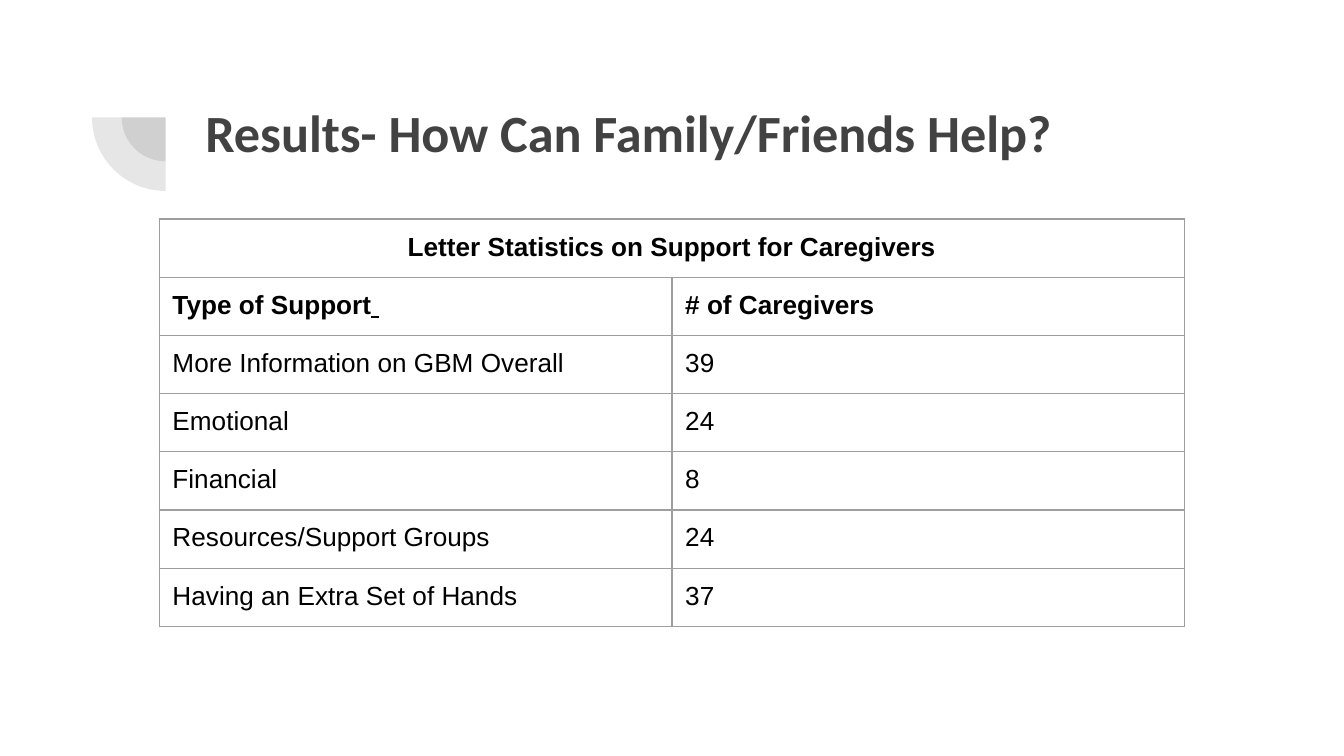
from dataclasses import dataclass

from lxml.etree import SubElement
from pptx import Presentation
from pptx.dml.color import RGBColor
from pptx.enum.shapes import MSO_SHAPE
from pptx.enum.text import MSO_ANCHOR, MSO_AUTO_SIZE, PP_ALIGN
from pptx.oxml.ns import qn
from pptx.util import Cm, Pt

TITLE = "Results- How Can Family/Friends Help?"
TABLE_HEADING = "Letter Statistics on Support for Caregivers"
COLUMN_HEADINGS = ("Type of Support", "# of Caregivers")
SUPPORT_COUNTS = [
    ("More Information on GBM Overall", 39),
    ("Emotional", 24),
    ("Financial", 8),
    ("Resources/Support Groups", 24),
    ("Having an Extra Set of Hands", 37),
]


@dataclass(frozen=True)
class Theme:
    title_font: str = "Calibri"
    table_font: str = "Arial"
    title_size: int = 28
    table_size: int = 14
    dark: str = "424242"
    text: str = "000000"
    border: str = "9E9E9E"
    border_width: float = 0.75
    ornament_opacity: int = 13


THEME = Theme()
INSET = Cm(0.25)
ROW_HEIGHT = Cm(1.1)
COLUMN_WIDTH = Cm(9.69)
ORNAMENT_CENTER = (Cm(3.13), Cm(2.22))
ORNAMENT_RADII = (Cm(0.83), Cm(1.39))


def format_run(run, font_name, size, color, bold):
    font = run.font
    font.name, font.size, font.bold = font_name, Pt(size), bold
    font.color.rgb = RGBColor.from_string(color)


def add_quarter_disc(slide, radius):
    center_x, center_y = ORNAMENT_CENTER
    disc = slide.shapes.add_shape(
        MSO_SHAPE.PIE, center_x - radius, center_y - radius, 2 * radius, 2 * radius
    )
    # Angles in units of 100000/60000 degree: 90 to 180 degrees
    disc.adjustments[0], disc.adjustments[1] = 54, 108
    disc.shadow.inherit = False
    disc.line.fill.background()
    disc.fill.solid()
    disc.fill.fore_color.rgb = RGBColor.from_string(THEME.dark)
    color = disc.fill._xPr.find(f"{qn('a:solidFill')}/{qn('a:srgbClr')}")
    SubElement(color, qn("a:alpha"), val=str(THEME.ornament_opacity * 1000))


def add_title(slide):
    title = slide.shapes.title
    title.left, title.top, title.width, title.height = Cm(3.63), Cm(1.65), Cm(19.53), Cm(2.77)
    frame = title.text_frame
    frame.text = TITLE
    frame.word_wrap = True
    frame.auto_size = MSO_AUTO_SIZE.NONE
    frame.vertical_anchor = MSO_ANCHOR.TOP
    frame.margin_left = frame.margin_right = frame.margin_top = frame.margin_bottom = INSET
    paragraph = frame.paragraphs[0]
    paragraph.alignment = PP_ALIGN.LEFT
    format_run(paragraph.runs[0], THEME.title_font, THEME.title_size, THEME.dark, True)


def add_borders(cell):
    properties = cell._tc.get_or_add_tcPr()
    for side in ("lnL", "lnR", "lnT", "lnB"):
        line = SubElement(properties, qn(f"a:{side}"), w=str(Pt(THEME.border_width)))
        SubElement(SubElement(line, qn("a:solidFill")), qn("a:srgbClr"), val=THEME.border)


def add_support_table(slide):
    rows = [(TABLE_HEADING, ""), COLUMN_HEADINGS, *SUPPORT_COUNTS]
    table = slide.shapes.add_table(
        len(rows), 2, Cm(3.01), Cm(4.14), 2 * COLUMN_WIDTH, len(rows) * ROW_HEIGHT
    ).table
    table.first_row = table.horz_banding = False
    for row_index, values in enumerate(rows):
        for column_index, value in enumerate(values):
            cell = table.cell(row_index, column_index)
            cell.text = str(value)
            cell.margin_left = cell.margin_right = cell.margin_top = cell.margin_bottom = INSET
            add_borders(cell)
            cell.fill.background()
            for run in cell.text_frame.paragraphs[0].runs:
                format_run(run, THEME.table_font, THEME.table_size, THEME.text, row_index < 2)

    table.cell(0, 0).merge(table.cell(0, 1))
    table.cell(0, 0).text_frame.paragraphs[0].alignment = PP_ALIGN.CENTER

    # The first column heading ends in an underlined space
    underlined = table.cell(1, 0).text_frame.paragraphs[0].add_run()
    underlined.text = " "
    format_run(underlined, THEME.table_font, THEME.table_size, THEME.text, True)
    underlined.font.underline = True


def main():
    presentation = Presentation()
    presentation.slide_width, presentation.slide_height = Cm(25.4), Cm(14.29)
    slide = presentation.slides.add_slide(presentation.slide_layouts[5])
    for radius in ORNAMENT_RADII:
        add_quarter_disc(slide, radius)
    add_title(slide)
    add_support_table(slide)
    presentation.save("out.pptx")


if __name__ == "__main__":
    main()
